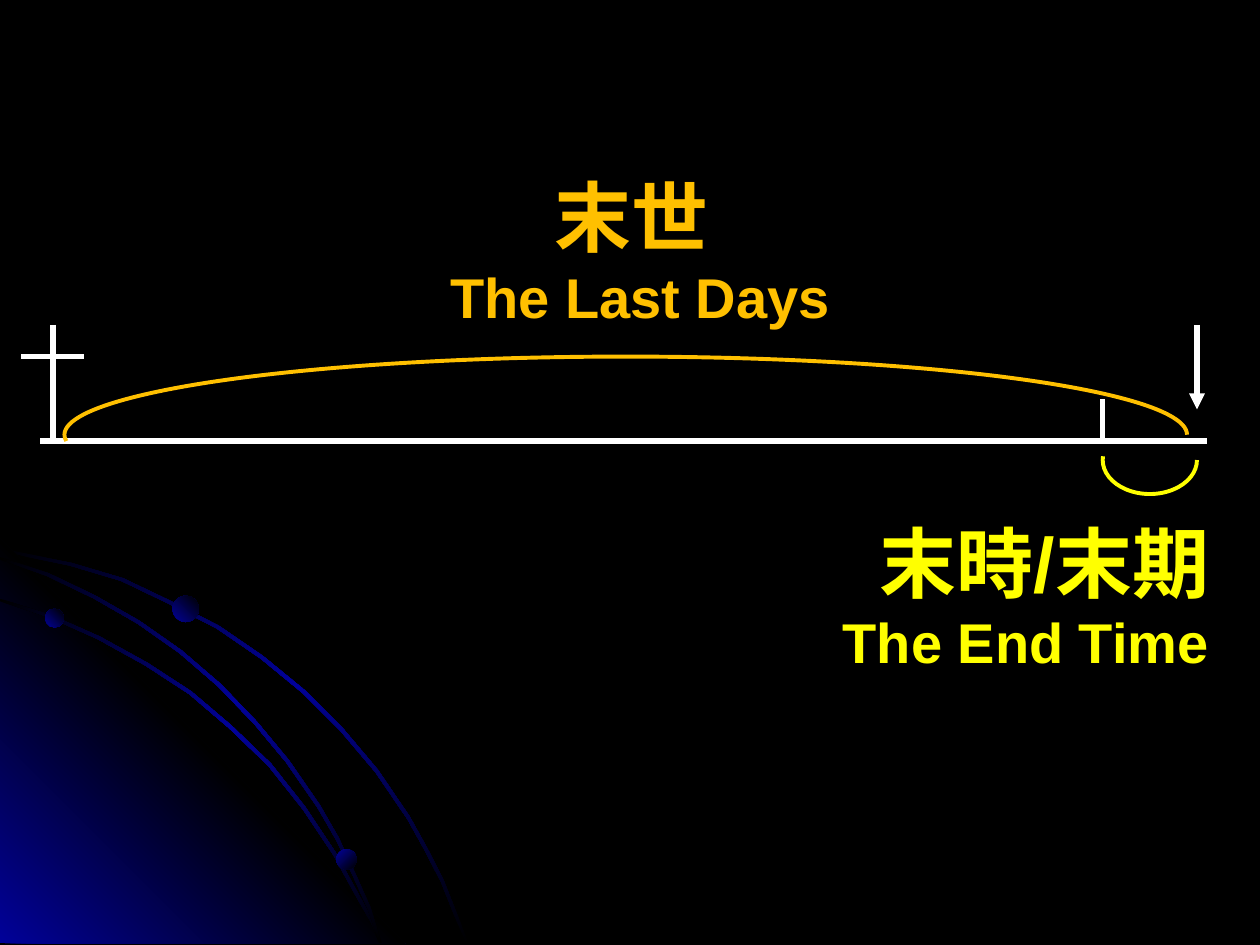
import copy

import pptx
import pptx.dml.color
import pptx.enum.shapes
import pptx.enum.text
import pptx.oxml
import pptx.oxml.ns
import pptx.util

Cm = pptx.util.Cm
Shapes = pptx.enum.shapes.MSO_SHAPE
Align = pptx.enum.text.PP_ALIGN

COLOURS = {
    "black": "000000",
    "blue": "010199",
    "white": "FFFFFF",
    "orange": "FFC000",
    "yellow": "FFFF00",
}
BAND_THICKNESS = 0.05
ORBITS = [
    [(0, 0.2), (0.71, 0.35), (1.45, 0.5), (2.49, 0.81), (3.45, 1.27),
     (4.42, 1.77), (5.31, 2.38), (6.15, 3.07), (6.91, 3.83), (7.62, 4.67),
     (8.26, 5.61), (8.61, 6.24), (8.94, 6.88), (9.19, 7.51), (9.45, 8.17)],
    [(0, 1.22), (1.04, 1.55), (2.01, 1.98), (2.97, 2.51), (3.86, 3.09),
     (4.67, 3.78), (5.46, 4.54), (6.15, 5.41), (6.76, 6.32), (7.26, 7.23),
     (7.52, 7.69), (7.7, 8.17)],
    [(0, 0.38), (0.99, 0.71), (1.93, 1.16), (2.82, 1.67), (3.66, 2.26),
     (4.45, 2.94), (5.18, 3.7), (5.82, 4.47), (6.45, 5.38), (6.83, 6.04),
     (7.16, 6.75), (7.47, 7.44), (7.7, 8.17)],
]
PLANETS = [(0.91, 1.42, 0.38, 45), (6.78, 6.27, 0.41, 315), (3.48, 1.16, 0.53, 45)]


def colour(name):
    return pptx.dml.color.RGBColor.from_string(COLOURS[name])


def fill_gradient(shape, names, angle):
    shape.shadow.inherit = False
    shape.line.fill.background()
    shape.fill.gradient()
    shape.fill.gradient_angle = angle
    stops = shape.fill.gradient_stops
    if len(names) == 3:
        stop_list = shape.element.spPr.find(".//" + pptx.oxml.ns.qn("a:gsLst"))
        stop_list.append(copy.deepcopy(stop_list[-1]))
        stops = shape.fill.gradient_stops
    for index, (stop, name) in enumerate(zip(stops, names)):
        stop.color.rgb = colour(name)
        stop.position = index / (len(names) - 1)


def add_outline(slide, left, top, points):
    corners = [(Cm(left + x), Cm(top + y)) for x, y in points]
    builder = slide.shapes.build_freeform(*corners[0], scale=1.0)
    builder.add_line_segments(corners[1:], close=True)
    return builder.convert_to_shape()


def add_line(slide, start, end, arrow=False):
    line = slide.shapes.add_connector(
        pptx.enum.shapes.MSO_CONNECTOR.STRAIGHT, *map(Cm, start + end))
    line.line.color.rgb = colour("white")
    line.line.width = pptx.util.Pt(3)
    if arrow:
        namespace = pptx.oxml.ns.nsdecls("a")
        line.line._get_or_add_ln().append(
            pptx.oxml.parse_xml(f'<a:tailEnd {namespace} type="triangle"/>'))
    properties = line.element.spPr
    properties.append(properties.makeelement(pptx.oxml.ns.qn("a:effectLst"), {}))


def add_arc(slide, left, top, width, height, start, end, name):
    arc = slide.shapes.add_shape(Shapes.ARC, Cm(left), Cm(top), Cm(width), Cm(height))
    arc.adjustments[0] = start * 0.6
    arc.adjustments[1] = end * 0.6
    arc.shadow.inherit = False
    arc.fill.background()
    arc.line.color.rgb = colour(name)
    arc.line.width = pptx.util.Pt(2.25)


def add_text(paragraph, text, size, name, align):
    paragraph.alignment = align
    run = paragraph.add_run()
    run.text = text
    run.font.name = "Arial"
    run.font.size = pptx.util.Pt(size)
    run.font.bold = True
    run.font.color.rgb = colour(name)


def add_label(slide, left, top, width, height, chinese, english, name, align):
    box = slide.shapes.add_textbox(Cm(left), Cm(top), Cm(width), Cm(height))
    frame = box.text_frame
    frame.word_wrap = False
    frame.auto_size = pptx.enum.text.MSO_AUTO_SIZE.SHAPE_TO_FIT_TEXT
    add_text(frame.paragraphs[0], chinese, size=44, name=name, align=align)
    add_text(frame.add_paragraph(), english, size=32, name=name, align=Align.CENTER)


def add_orbit(slide, left, top, size, outer):
    inner = [(max(x - BAND_THICKNESS, 0), min(y + BAND_THICKNESS, size))
             for x, y in reversed(outer)]
    band = add_outline(slide, left, top, outer + inner)
    fill_gradient(band, ["black", "blue", "black"], 315)


def add_corner_decoration(slide, left, top, size):
    add_orbit(slide, left, top, size, ORBITS[0])
    glow = add_outline(slide, left, top, [(0, 0), (size, size), (0, size)])
    fill_gradient(glow, ["blue", "black", "blue"], 45)
    for orbit in ORBITS[1:]:
        add_orbit(slide, left, top, size, orbit)
    for x, y, diameter, angle in PLANETS:
        planet = slide.shapes.add_shape(
            Shapes.OVAL, Cm(left + x), Cm(top + y), Cm(diameter), Cm(diameter))
        fill_gradient(planet, ["blue", "black"], angle)


def add_timeline(slide, left, top, width, height):
    axis = top + height
    right = left + width
    cross = left + 0.64
    end_time = right - 1.9
    add_line(slide, (cross, top), (cross, axis))
    add_line(slide, (left, top + 0.64), (left + 1.27, top + 0.64))
    add_line(slide, (left + 0.38, axis), (right + 0.2, axis))
    add_line(slide, (right, top), (right, top + 1.7), arrow=True)
    add_arc(slide, left + 0.87, top + 0.64, 22.63, 3.15, 179.35, 0, "orange")
    add_arc(slide, end_time, top + 2.04, 1.9, 1.37, 0, 184.6, "yellow")
    add_line(slide, (end_time, top + 1.5), (end_time, axis))


def main():
    presentation = pptx.Presentation()
    presentation.slide_width = Cm(25.4)
    presentation.slide_height = Cm(19.05)
    slide = presentation.slides.add_slide(presentation.slide_layouts[6])
    slide.background.fill.solid()
    slide.background.fill.fore_color.rgb = colour("black")
    add_corner_decoration(slide, 0, 10.85, 8.17)
    add_timeline(slide, 0.43, 6.55, 23.7, 2.34)
    add_label(slide, 8.79, 3.3, 8.23, 3.5, "末世 ", "The Last Days", "orange", Align.CENTER)
    add_label(slide, 16.2, 10.26, 8.43, 3.5, "末時/末期", "The End Time", "yellow", Align.RIGHT)
    presentation.save("out.pptx")


if __name__ == "__main__":
    main()
